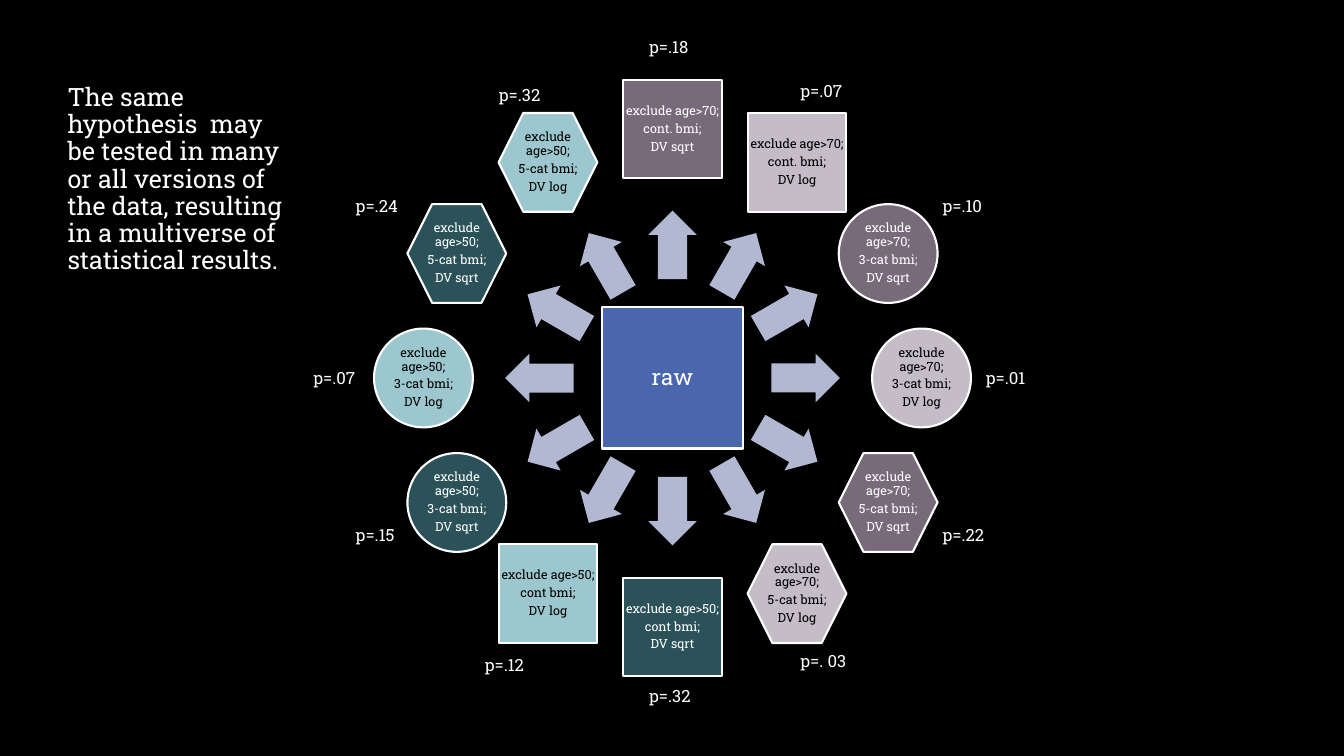
from dataclasses import dataclass
from math import cos, radians, sin

from pptx import Presentation
from pptx import util as u
from pptx.dml.color import RGBColor
from pptx.enum import shapes, text


@dataclass(frozen=True)
class Theme:
    font: str = "Roboto Slab"
    background: str = "000000"
    light: str = "FFFFFF"
    dark: str = "000000"
    raw: str = "4A66AC"
    arrow: str = "B2B8D2"
    title_size: int = 18
    raw_size: int = 16
    label_size: int = 12
    node_size: int = 9


THEME = Theme()
KIND = shapes.MSO_SHAPE
CENTER_X, CENTER_Y = 6.67, 3.75
RAW_SIDE, NODE_SIDE = 1.4, 0.98
NODE_RADIUS, ARROW_RADIUS = 2.47, 1.32
ARROW_W, ARROW_H = 0.68, 0.48

# Each age limit: (age, continuous bmi wording, shapes, (fill, text) for sqrt and log)
AGE_GROUPS = [
    (70, "cont. bmi;", ("cont", "3-cat", "5-cat"),
     {"sqrt": ("78697B", THEME.light), "log": ("C4BCC6", THEME.dark)}),
    (50, "cont bmi;", ("cont", "3-cat", "5-cat"),
     {"sqrt": ("2B5259", THEME.light), "log": ("9CC7CE", THEME.dark)}),
]
BMI_SHAPES = {"cont": KIND.RECTANGLE, "3-cat": KIND.OVAL, "5-cat": KIND.HEXAGON}

# Clockwise from the top: text, left, top
P_VALUES = [
    ("p=.18", 6.34, 0.32), ("p=.07", 7.84, 0.75), ("p=.10", 9.25, 1.89),
    ("p=.01", 9.68, 3.6), ("p=.22", 9.25, 5.16), ("p=. 03", 7.84, 6.41),
    ("p=.32", 6.34, 6.75), ("p=.12", 4.71, 6.45), ("p=.15", 3.43, 5.16),
    ("p=.07", 3.01, 3.6), ("p=.24", 3.43, 1.89), ("p=.32", 4.85, 0.79),
]
TITLE = ("The same hypothesis  may be tested in many or all versions of the data, "
         "resulting in a multiverse of statistical results.")


def set_attrs(obj, values):
    for name, value in values.items():
        setattr(obj, name, value)


def write(sp, lines, size, color, inset=(0.1, 0.05), paragraph=None, **frame):
    """Fill a shape's text frame, one paragraph a line."""
    tf = sp.text_frame
    dx, dy = (u.Inches(v) for v in inset)
    set_attrs(tf, {"word_wrap": True, "margin_left": dx, "margin_right": dx,
                   "margin_top": dy, "margin_bottom": dy, **frame})
    for i, line in enumerate(lines):
        p = tf.add_paragraph() if i else tf.paragraphs[0]
        set_attrs(p, {"alignment": text.PP_ALIGN.LEFT, **(paragraph or {})})
        r = p.add_run()
        r.text = line
        set_attrs(r.font, {"name": THEME.font, "size": u.Pt(size)})
        r.font.color.rgb = RGBColor.from_string(color)


def add_centered(group, kind, x, y, w, h, fill, outlined=True):
    """Add a filled shape whose middle is at x, y."""
    sp = group.shapes.add_shape(kind, u.Inches(x - w / 2), u.Inches(y - h / 2),
                                u.Inches(w), u.Inches(h))
    sp.shadow.inherit = False
    sp.fill.solid()
    sp.fill.fore_color.rgb = RGBColor.from_string(fill)
    if outlined:
        sp.line.color.rgb = RGBColor.from_string(THEME.light)
        sp.line.width = u.Pt(1.5)
    else:
        sp.line.fill.background()
    return sp


def add_node(group, kind, x, y, side, fill, lines, size, color, inset):
    sp = add_centered(group, kind, x, y, side, side, fill)
    write(sp, lines, size, color, (inset, inset),
          {"alignment": text.PP_ALIGN.CENTER, "line_spacing": 0.9,
           "space_after": u.Pt(round(size * 0.35))},
          vertical_anchor=text.MSO_ANCHOR.MIDDLE)


def add_arrow(group, x, y, angle):
    sp = add_centered(group, KIND.RIGHT_ARROW, x, y, ARROW_W, ARROW_H, THEME.arrow, False)
    sp.adjustments[0], sp.adjustments[1] = 0.6, 0.5
    sp.rotation = angle % 360


def on_circle(radius, angle):
    return (CENTER_X + radius * cos(radians(angle)),
            CENTER_Y + radius * sin(radians(angle)))


def add_multiverse(s):
    group = s.shapes.add_group_shape()
    add_node(group, KIND.RECTANGLE, CENTER_X, CENTER_Y, RAW_SIDE, THEME.raw,
             ["raw"], THEME.raw_size, THEME.light, 0.02)
    versions = [(age, cont if bmi == "cont" else f"{bmi} bmi;", BMI_SHAPES[bmi], dv, colors)
                for age, cont, bmis, dvs in AGE_GROUPS
                for bmi in bmis
                for dv, colors in dvs.items()]
    step = 360 / len(versions)
    for i, (age, bmi, kind, dv, (fill, color)) in enumerate(versions):
        angle = -90 + i * step
        add_arrow(group, *on_circle(ARROW_RADIUS, angle), angle)
        add_node(group, kind, *on_circle(NODE_RADIUS, angle), NODE_SIDE, fill,
                 [f"exclude age>{age};", bmi, f"DV {dv}"], THEME.node_size, color, 0.01)


def add_p_value(s, label, left, top):
    width = 0.65 if len(label) < 6 else 0.72
    sp = s.shapes.add_textbox(u.Inches(left), u.Inches(top), u.Inches(width), u.Inches(0.3))
    write(sp, [label], THEME.label_size, THEME.light)


def set_title(s):
    sp = s.shapes.title
    set_attrs(sp, {"left": u.Inches(0.57), "top": u.Inches(0.79),
                   "width": u.Inches(2.44), "height": u.Inches(2.22)})
    write(sp, [TITLE], THEME.title_size, THEME.light, paragraph={"line_spacing": 0.9},
          vertical_anchor=text.MSO_ANCHOR.TOP, auto_size=text.MSO_AUTO_SIZE.NONE)


def main():
    prs = Presentation()
    set_attrs(prs, {"slide_width": u.Inches(13.33), "slide_height": u.Inches(7.5)})
    s = prs.slides.add_slide(prs.slide_layouts.get_by_name("Title Only"))
    s.background.fill.solid()
    s.background.fill.fore_color.rgb = RGBColor.from_string(THEME.background)
    set_title(s)
    add_multiverse(s)
    for p_value in P_VALUES:
        add_p_value(s, *p_value)
    prs.save("out.pptx")


if __name__ == "__main__":
    main()
